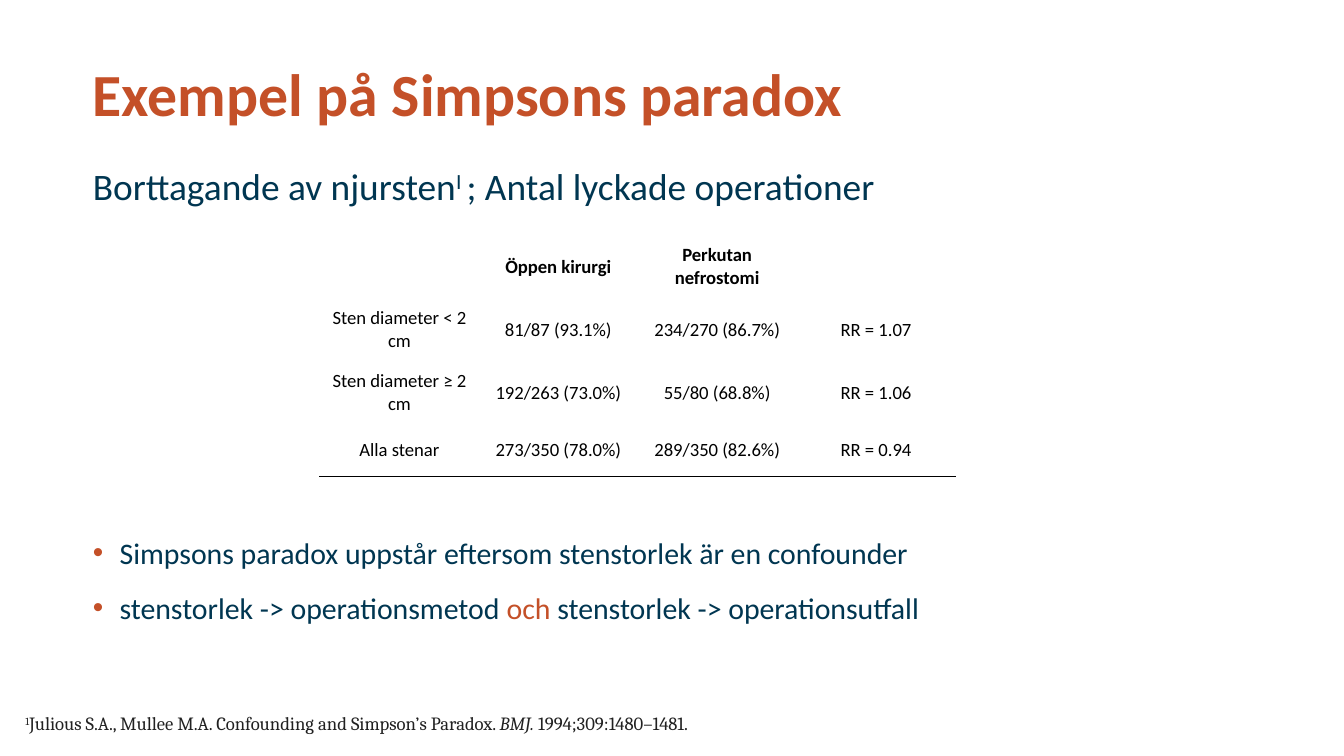
from typing import NamedTuple

from lxml import etree
from pptx import Presentation
from pptx import util as u
from pptx.dml import color
from pptx.enum import text
from pptx.oxml import ns

ORANGE, NAVY, BLACK, WHITE, GREY = "C45028", "003651", "000000", "FFFFFF", "212121"


class Span(NamedTuple):
    words: str
    color: str = NAVY
    bold: bool = False
    italic: bool = False
    raised: bool = False


class TextBlock(NamedTuple):
    left: float
    top: float
    width: float
    height: float
    size: float
    paras: list[list[Span]]
    font: str = "Calibri"
    line_spacing: float = 1.14
    inset: tuple[float, float] = (0, 0)
    bullets: bool = False


def rgb(code: str) -> color.RGBColor:
    return color.RGBColor.from_string(code)


def add_spans(para, spans: list[Span], size: float, font: str) -> None:
    for span in spans:
        run = para.add_run()
        run.text = span.words
        run.font.name = font
        run.font.size = u.Pt(size)
        run.font.bold = span.bold
        run.font.italic = span.italic
        run.font.color.rgb = rgb(span.color)
        if span.raised:
            run.font._element.set("baseline", "30000")


def add_bullet(para) -> None:
    props = para._p.get_or_add_pPr()
    props.set("marL", str(u.Pt(14.4)))
    props.set("indent", str(u.Pt(-14.4)))
    tint = etree.SubElement(props, ns.qn("a:buClr"))
    etree.SubElement(tint, ns.qn("a:srgbClr"), val=ORANGE)
    etree.SubElement(props, ns.qn("a:buFont"), typeface="Arial")
    etree.SubElement(props, ns.qn("a:buChar"), char="•")


def add_block(page, block: TextBlock) -> None:
    box = page.shapes.add_textbox(
        u.Pt(block.left), u.Pt(block.top), u.Pt(block.width), u.Pt(block.height))
    frame = box.text_frame
    frame.word_wrap = True
    frame.margin_left = frame.margin_right = u.Pt(block.inset[0])
    frame.margin_top = frame.margin_bottom = u.Pt(block.inset[1])
    for index, spans in enumerate(block.paras):
        para = frame.paragraphs[0] if index == 0 else frame.add_paragraph()
        if block.bullets:
            add_bullet(para)
        para.line_spacing = block.line_spacing
        if index > 0:
            para.space_before = u.Pt(7.5)
        add_spans(para, spans, block.size, block.font)


def add_bottom_line(cell) -> None:
    props = cell._tc.get_or_add_tcPr()
    line = etree.Element(ns.qn("a:lnB"), w=str(u.Pt(0.75)))
    fill = etree.SubElement(line, ns.qn("a:solidFill"))
    etree.SubElement(fill, ns.qn("a:srgbClr"), val=BLACK)
    props.insert(0, line)


def add_results(page, rows: list[list[str]], heights: list[float]) -> None:
    column = 85.1
    count = len(rows[0])
    frame = page.shapes.add_table(
        len(rows), count, u.Pt(171.4), u.Pt(126),
        u.Pt(column * count), u.Pt(sum(heights)))
    table = frame.table
    table.first_row = table.horz_banding = False
    for item in table.columns:
        item.width = u.Pt(column)
    for r, (words, height) in enumerate(zip(rows, heights)):
        table.rows[r].height = u.Pt(height)
        for c, word in enumerate(words):
            cell = table.cell(r, c)
            cell.fill.solid()
            cell.fill.fore_color.rgb = rgb(WHITE)
            cell.vertical_anchor = text.MSO_ANCHOR.MIDDLE
            cell.margin_left = cell.margin_right = u.Pt(3.6)
            cell.margin_top = cell.margin_bottom = u.Pt(2.2)
            para = cell.text_frame.paragraphs[0]
            para.alignment = text.PP_ALIGN.CENTER
            if word:
                add_spans(para, [Span(word, BLACK, bold=r == 0)], 10, "Calibri")
            if r == len(rows) - 1:
                add_bottom_line(cell)


TITLE = TextBlock(49.7, 34.6, 622.8, 38.2, 32, [
    [Span("Exempel på Simpsons paradox", ORANGE, bold=True)],
], line_spacing=0.9)

SUBTITLE = TextBlock(49.7, 84.2, 622.8, 30.2, 20, [
    [Span("Borttagande av njursten"), Span("I ", raised=True),
     Span("; Antal lyckade operationer")],
])

RESULTS = [
    ["", "Öppen kirurgi", "Perkutan nefrostomi", ""],
    ["Sten diameter < 2 cm", "81/87 (93.1%)", "234/270 (86.7%)", "RR = 1.07"],
    ["Sten diameter ≥ 2 cm", "192/263 (73.0%)", "55/80 (68.8%)", "RR = 1.06"],
    ["Alla stenar", "273/350 (78.0%)", "289/350 (82.6%)", "RR = 0.94"],
]

SOURCE = TextBlock(6.5, 378, 459.4, 19.4, 10, [
    [Span("1", GREY, raised=True),
     Span("Julious S.A., Mullee M.A. Confounding and Simpson’s Paradox. ", GREY),
     Span("BMJ. ", GREY, italic=True),
     Span("1994;309:1480–1481.", GREY)],
], font="Cambria", line_spacing=1.0, inset=(7.2, 3.6))

CONCLUSIONS = TextBlock(49.7, 283.7, 622.8, 73.4, 16, [
    [Span("Simpsons paradox uppstår eftersom stenstorlek är en confounder")],
    [Span("stenstorlek -> operationsmetod "), Span("och ", ORANGE),
     Span("stenstorlek -> operationsutfall")],
], bullets=True)


def main() -> None:
    deck = Presentation()
    deck.slide_width, deck.slide_height = u.Pt(720), u.Pt(405)
    page = deck.slides.add_slide(deck.slide_layouts[6])

    # Heading
    add_block(page, TITLE)
    add_block(page, SUBTITLE)

    # Operation results
    add_results(page, RESULTS, [33.8, 33.8, 33.8, 28.1])

    # Conclusions and reference
    add_block(page, CONCLUSIONS)
    add_block(page, SOURCE)

    deck.save("out.pptx")


if __name__ == "__main__":
    main()
